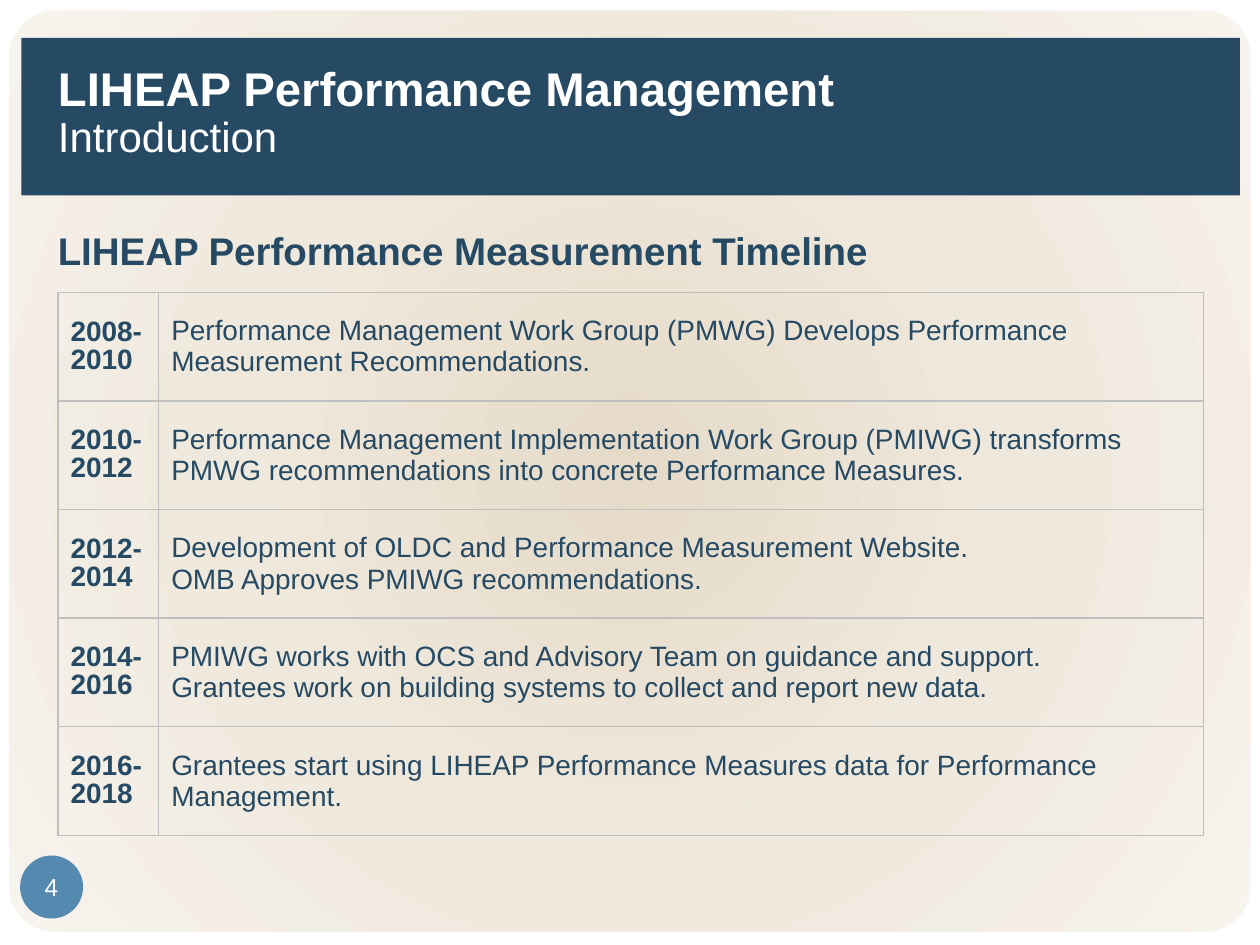
"""Build the LIHEAP performance measurement timeline slide."""
from lxml import etree
from pptx import Presentation
from pptx.dml.color import RGBColor
from pptx.enum.shapes import MSO_SHAPE
from pptx.enum.text import MSO_ANCHOR, PP_ALIGN
from pptx.oxml import parse_xml
from pptx.oxml.ns import qn
from pptx.util import Inches, Pt

RECTANGLE_ROUNDED = MSO_SHAPE.ROUNDED_RECTANGLE
OVAL = MSO_SHAPE.OVAL
MIDDLE = MSO_ANCHOR.MIDDLE
LEFT, CENTER = PP_ALIGN.LEFT, PP_ALIGN.CENTER

FONT = "Arial"
NAVY, BLUE, WHITE, GREY = "264A64", "548AB0", "FFFFFF", "BFBFBF"
PANEL_STOPS = [(0, "E6DBC9"), (50, "EFE8DC"), (100, "F7F3ED")]
DRAWING = "http://schemas.openxmlformats.org/drawingml/2006/main"

TIMELINE = [
    ("2008-2010", ["Performance Management Work Group (PMWG) Develops Performance "
                   "Measurement Recommendations."]),
    ("2010-2012", ["Performance Management Implementation Work Group (PMIWG) transforms "
                   "PMWG recommendations into concrete Performance Measures."]),
    ("2012-2014", ["Development of OLDC and Performance Measurement Website.",
                   "OMB Approves PMIWG recommendations."]),
    ("2014-2016", ["PMIWG works with OCS and Advisory Team on guidance and support.",
                   "Grantees work on building systems to collect and report new data."]),
    ("2016-2018", ["Grantees start using LIHEAP Performance Measures data for Performance "
                   "Management."]),
]


def color(value):
    """Return the colour for a hex string."""
    return RGBColor.from_string(value)


def set_font(font, size, value, bold=False):
    """Set the typeface, size, colour and weight of a font."""
    font.name = FONT
    font.size = Pt(size)
    font.color.rgb = color(value)
    font.bold = bold


def set_indent(para, margin, first):
    """Set the left margin and first-line indent of a paragraph."""
    properties = para._p.get_or_add_pPr()
    properties.set("marL", str(Inches(margin)))
    properties.set("indent", str(Inches(first)))


def place(shape, left, top, width, height):
    """Move and size a shape in inches."""
    shape.left, shape.top = Inches(left), Inches(top)
    shape.width, shape.height = Inches(width), Inches(height)


def add_shape(slide, kind, left, top, width, height):
    """Add a preset shape without a shadow."""
    shape = slide.shapes.add_shape(
        kind, Inches(left), Inches(top), Inches(width), Inches(height))
    shape.shadow.inherit = False
    return shape


def add_panel(slide):
    """Add the rounded panel with a radial gradient behind the title."""
    panel = add_shape(slide, RECTANGLE_ROUNDED, 0.07, 0.08, 9.86, 7.32)
    panel.adjustments[0] = 0.05
    panel.line.color.rgb = color(WHITE)
    panel.line.width = Pt(0.5)
    stops = "".join(
        f'<a:gs pos="{position * 1000}"><a:srgbClr val="{value}"/></a:gs>'
        for position, value in PANEL_STOPS)
    gradient = parse_xml(
        f'<a:gradFill xmlns:a="{DRAWING}" rotWithShape="1"><a:gsLst>{stops}</a:gsLst>'
        '<a:path path="circle"><a:fillToRect l="50000" t="50000" r="50000" b="50000"/>'
        '</a:path></a:gradFill>')
    panel._element.spPr.find(qn("a:prstGeom")).addnext(gradient)
    slide.shapes.title._element.addprevious(panel._element)


def format_title(slide, heading, section):
    """Turn the title placeholder into a banner with two lines."""
    title = slide.shapes.title
    place(title, 0.17, 0.3, 9.67, 1.25)
    title.fill.solid()
    title.fill.fore_color.rgb = color(NAVY)
    frame = title.text_frame
    frame.vertical_anchor = MIDDLE
    frame.margin_bottom = Inches(0.1)
    para = frame.paragraphs[0]
    para.alignment = LEFT
    para.line_spacing = 0.9
    set_indent(para, 0.19, 0)
    span = para.add_run()
    span.text = heading
    set_font(span.font, 27, WHITE, bold=True)
    para.add_line_break()
    span = para.add_run()
    span.text = section
    set_font(span.font, 24, WHITE)


def add_subtitle(slide, text):
    """Add the bold heading above the table."""
    box = slide.shapes.add_textbox(Inches(0.04), Inches(1.75), Inches(9.42), Inches(0.5))
    box.text_frame.word_wrap = True
    para = box.text_frame.paragraphs[0]
    para.text = text
    set_indent(para, 1, -0.68)
    set_font(para.font, 22, NAVY, bold=True)


def set_borders(cell):
    """Draw a thin grey line on each side of a cell."""
    properties = cell._tc.get_or_add_tcPr()
    for index, side in enumerate(("lnL", "lnR", "lnT", "lnB")):
        line = etree.Element(qn(f"a:{side}"), w=str(Pt(1)))
        fill = etree.SubElement(line, qn("a:solidFill"))
        etree.SubElement(fill, qn("a:srgbClr"), val=GREY)
        properties.insert(index, line)


def fill_cell(cell, lines, bold=False, spacing=None):
    """Write the lines of a cell and format it."""
    cell.fill.background()
    cell.vertical_anchor = MIDDLE
    set_borders(cell)
    cell.text = "\n".join(lines)
    for para in cell.text_frame.paragraphs:
        para.line_spacing = spacing
        set_font(para.font, 16, NAVY, bold)


def add_timeline(slide):
    """Add the table of periods and milestones."""
    table = slide.shapes.add_table(
        len(TIMELINE), 2, Inches(0.46), Inches(2.32), Inches(9.09), Inches(4.31)).table
    table.first_row = table.horz_banding = False
    table.columns[0].width = Inches(0.8)
    table.columns[1].width = Inches(8.29)
    for row, (period, milestones) in enumerate(TIMELINE):
        fill_cell(table.cell(row, 0), [period], bold=True, spacing=0.9)
        fill_cell(table.cell(row, 1), milestones)


def add_page_number(slide, number):
    """Add the round page number badge."""
    badge = add_shape(slide, OVAL, 0.16, 6.79, 0.5, 0.5)
    badge.fill.solid()
    badge.fill.fore_color.rgb = color(BLUE)
    badge.line.fill.background()
    frame = badge.text_frame
    frame.margin_left = frame.margin_right = frame.margin_top = frame.margin_bottom = 0
    frame.word_wrap = False
    frame.vertical_anchor = MIDDLE
    para = frame.paragraphs[0]
    para.text = number
    para.alignment = CENTER
    set_font(para.font, 14, WHITE)


def main():
    """Build and save the deck."""
    deck = Presentation()
    deck.slide_width, deck.slide_height = Inches(10), Inches(7.5)
    slide = deck.slides.add_slide(deck.slide_layouts[5])
    slide.background.fill.solid()
    slide.background.fill.fore_color.rgb = color(WHITE)
    format_title(slide, "LIHEAP Performance Management", "Introduction")
    add_panel(slide)
    add_subtitle(slide, "LIHEAP Performance Measurement Timeline")
    add_timeline(slide)
    add_page_number(slide, "4")
    deck.save("out.pptx")


if __name__ == "__main__":
    main()
